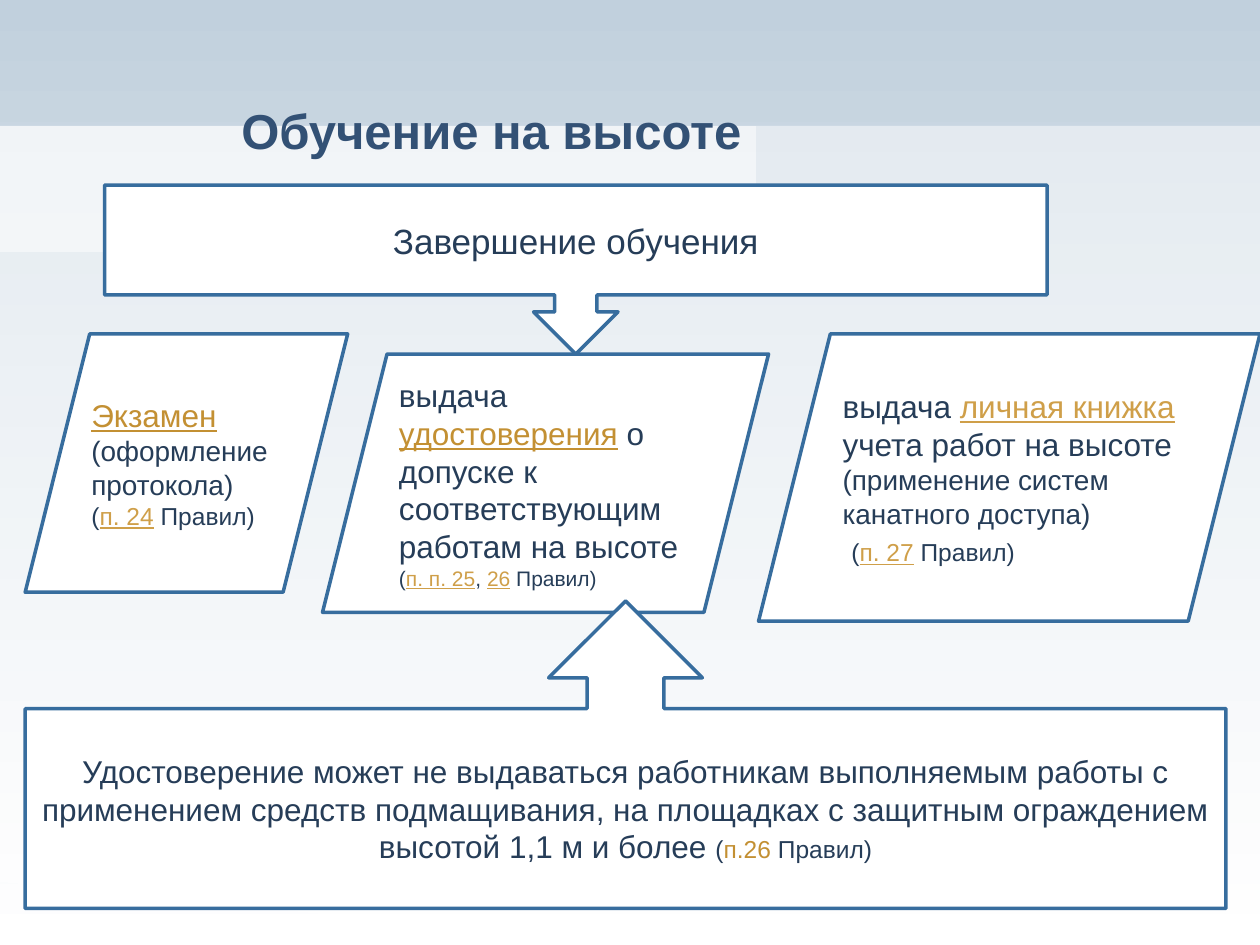
import pptx
import pptx.util
import pptx.dml.color
import pptx.enum.shapes
import pptx.enum.text
import pptx.oxml.ns
import lxml.etree

KIND = pptx.enum.shapes.MSO_SHAPE
ALIGN = pptx.enum.text.PP_ALIGN
ANCHOR = pptx.enum.text.MSO_ANCHOR
WIDE, HIGH = 10, 7.5

THEME = {
    "font": "Arial",
    "ink": "263D58", "title": "335175", "gold": "C39033", "link": "CF9F49",
    "line": "376D9E", "white": "FFFFFF", "sky": "C1D0DD",
    "head": 28, "top": 20, "body": 18, "mid": 16, "small": 14, "tiny": 12,
    "stroke": 2, "veil": 50,
}

VEILS = [
    [(0.01, 7.49), (10.03, 7.5), (10, 1.21), (0, 1.21)],
    [(9.98, 0.77), (4.26, 0.76), (4.08, 0.77), (3.78, 0.91), (3.68, 0.94),
     (3.56, 0.96), (0, 0.95), (0, 1.5), (6.26, 1.5), (6.38, 1.47),
     (6.74, 1.31), (6.92, 1.3), (9.99, 1.3)],
]

TITLE = [[("Обучение на высоте", "head", "title")]]

LEFT, ROW = 0.02, 2.65 / HIGH
BOXES = [
    (KIND.DOWN_ARROW_CALLOUT, (0.083, 1.47 / HIGH, 0.748, 1.34 / HIGH), ALIGN.CENTER,
     [[("Завершение обучения", "top", "ink")]]),
    (KIND.PARALLELOGRAM, (LEFT, ROW, 0.256, 2.05 / HIGH), ALIGN.LEFT,
     [[("Экзамен", "body", "gold", True)],
      [("(оформление протокола)", "mid", "ink")],
      [("(", "small", "ink"), ("п. 24", "small", "link", True),
       (" Правил)", "small", "ink")]]),
    (KIND.PARALLELOGRAM, (0.256, 2.81 / HIGH, 0.354, 2.05 / HIGH), ALIGN.LEFT,
     [[("выдача ", "body", "ink"), ("удостоверения", "body", "gold", True),
       (" о допуске к соответствующим работам на высоте ", "body", "ink"),
       ("(", "tiny", "ink"), ("п. п. 25", "tiny", "link", True),
       (", ", "tiny", "ink"), ("26", "tiny", "link", True),
       (" Правил)", "tiny", "ink")]]),
    (KIND.PARALLELOGRAM, (0.602, ROW, 0.398, 2.28 / HIGH), ALIGN.LEFT,
     [[("выдача ", "body", "ink"), ("личная книжка", "body", "link", True),
       (" учета работ на высоте ", "body", "ink"),
       ("(применение систем канатного доступа)", "mid", "ink")],
      [(" ", "body", "ink"), ("(", "small", "ink"),
       ("п. 27", "small", "link", True), (" Правил)", "small", "ink")]]),
    (KIND.UP_ARROW_CALLOUT, (LEFT, 4.77 / HIGH, 0.953, 2.44 / HIGH), ALIGN.CENTER,
     [[("Удостоверение может не выдаваться работникам выполняемым работы с "
        "применением средств подмащивания, на площадках с защитным "
        "ограждением высотой 1,1 м и более ", "body", "ink"),
       ("(", "small", "ink"), ("п.26", "small", "gold"),
       (" Правил)", "small", "ink")]]),
]


def tint(name):
    return pptx.dml.color.RGBColor.from_string(THEME[name])


def place(left, top, width, height):
    shares = (left * WIDE, top * HIGH, width * WIDE, height * HIGH)
    return [pptx.util.Inches(part) for part in shares]


def paint(slide):
    fill = slide.background.fill
    fill.gradient()
    fill.gradient_angle = 270
    for stop, spot, name in zip(fill.gradient_stops, (0, 1), ("sky", "white")):
        stop.position = spot
        stop.color.rgb = tint(name)


def veil(slide, points):
    build = slide.shapes.build_freeform(*points[0], scale=pptx.util.Inches(1))
    build.add_line_segments(points[1:], close=True)
    shape = build.convert_to_shape()
    shape.shadow.inherit = False
    shape.fill.solid()
    shape.fill.fore_color.rgb = tint("white")
    shape.line.fill.background()
    color = shape.fill._xPr.find(".//" + pptx.oxml.ns.qn("a:srgbClr"))
    alpha = lxml.etree.SubElement(color, pptx.oxml.ns.qn("a:alpha"))
    alpha.set("val", str(THEME["veil"] * 1000))


def write(shape, paras, align, bold=False):
    frame = shape.text_frame
    frame.word_wrap = True
    frame.vertical_anchor = ANCHOR.MIDDLE
    for order, runs in enumerate(paras):
        para = frame.add_paragraph() if order else frame.paragraphs[0]
        para.alignment = align
        for text, size, color, *under in runs:
            run = para.add_run()
            run.text = text
            run.font.name = THEME["font"]
            run.font.size = pptx.util.Pt(THEME[size])
            run.font.color.rgb = tint(color)
            run.font.bold = bold
            run.font.underline = bool(under)


def draw(slide, kind, area, align, paras):
    shape = slide.shapes.add_shape(kind, *place(*area))
    shape.shadow.inherit = False
    shape.fill.solid()
    shape.fill.fore_color.rgb = tint("white")
    shape.line.color.rgb = tint("line")
    shape.line.width = pptx.util.Pt(THEME["stroke"])
    write(shape, paras, align)


def main():
    deck = pptx.Presentation()
    deck.slide_width = pptx.util.Inches(WIDE)
    deck.slide_height = pptx.util.Inches(HIGH)
    slide = deck.slides.add_slide(deck.slide_layouts[6])
    paint(slide)
    for points in VEILS:
        veil(slide, points)
    title = slide.shapes.add_textbox(*place(LEFT, 0.08, 0.74, 0.86 / HIGH))
    write(title, TITLE, ALIGN.CENTER, bold=True)
    for box in BOXES:
        draw(slide, *box)
    deck.save("out.pptx")


if __name__ == "__main__":
    main()
